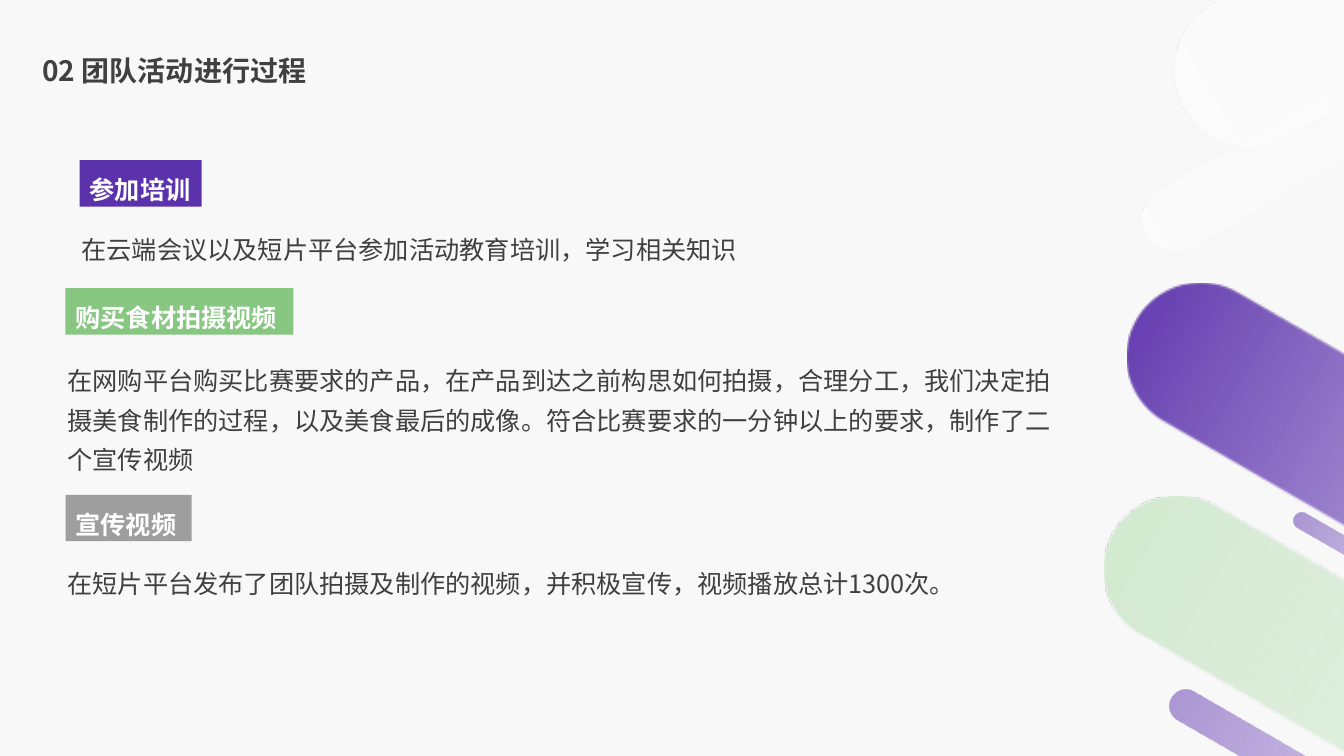
import pptx
import pptx.dml.color
import pptx.enum.shapes
import pptx.enum.text
import pptx.oxml
import pptx.oxml.ns
import pptx.util
from pptx.util import Inches

TEXT_FONT = "Noto Sans CJK SC"
TAG_FONT = "Quicksand"
INK = "404040"
WHITE = "FFFFFF"

# Gradient stops: position in %, colour, opacity in %
PURPLE_FADE = [(23, "5F34B2", 40), (85, WHITE, 50), (100, WHITE, 50)]
STRONG_PURPLE = [(0, "5B32AB", 100)] + PURPLE_FADE
SOFT_PURPLE = [(0, "5B32AB", 50)] + PURPLE_FADE
GREEN = [(0, "D0E9CE", 100), (22, "D0E9CE", 50), (85, WHITE, 50), (100, WHITE, 50)]
GLOW = [(0, WHITE, 50), (21, WHITE, 29), (85, WHITE, 0), (100, WHITE, 0)]

# Left, top, width, height, rotation, gradient
PILLS = [
    (9.9, 7.58, 20.55, 1.47, 30, STRONG_PURPLE),
    (10.96, -2.65, 11.87, 1.51, 330, GLOW),
    (11.02, 0.68, 5.27, 0.67, 330, GLOW),
    (9.68, 9.7, 20.55, 1.47, 30, GREEN),
    (12.68, 5.65, 2.44, 0.17, 30, SOFT_PURPLE),
    (11.31, 7.93, 4.69, 0.33, 30, SOFT_PURPLE),
]

# Tag left, tag top, tag width, tag colour, tag, details top, details height, details
STEPS = [
    (0.79, 1.59, 1.21, "5B32AB", "参加培训", 2.19, 0.46,
     "在云端会议以及短片平台参加活动教育培训，学习相关知识"),
    (0.65, 2.86, 2.26, "87C782", "购买食材拍摄视频", 3.49, 1.24,
     "在网购平台购买比赛要求的产品，在产品到达之前构思如何拍摄，合理分工，"
     "我们决定拍摄美食制作的过程，以及美食最后的成像。"
     "符合比赛要求的一分钟以上的要求，制作了二个宣传视频"),
    (0.65, 4.91, 1.25, "9E9E9E", "宣传视频", 5.5, 0.46,
     "在短片平台发布了团队拍摄及制作的视频，并积极宣传，视频播放总计1300次。"),
]


def rgb(code):
    return pptx.dml.color.RGBColor.from_string(code)


def write(frame, text, size, font_name, color, bold, line_spacing):
    """Fill a text frame with one left-aligned paragraph and return it."""
    frame.text = text
    paragraph = frame.paragraphs[0]
    paragraph.alignment = pptx.enum.text.PP_ALIGN.LEFT
    paragraph.line_spacing = line_spacing
    font = paragraph.font
    font.size = pptx.util.Pt(size)
    font.bold = bold
    font.name = font_name
    font.color.rgb = rgb(color)
    return paragraph


def fill_gradient(shape, stops):
    """Fill along the shape's length, with an opacity for each stop."""
    stop_xml = "".join(
        f'<a:gs pos="{position * 1000}"><a:srgbClr val="{color}">'
        f'<a:alpha val="{opacity * 1000}"/></a:srgbClr></a:gs>'
        for position, color, opacity in stops)
    gradient = pptx.oxml.parse_xml(
        f'<a:gradFill {pptx.oxml.ns.nsdecls("a")} rotWithShape="1">'
        f'<a:gsLst>{stop_xml}</a:gsLst><a:lin ang="0" scaled="0"/></a:gradFill>')
    shape.fill.solid()
    properties = shape._element.spPr
    properties.replace(properties.find(pptx.oxml.ns.qn("a:solidFill")), gradient)


def add_plain_shape(slide, kind, left, top, width, height):
    shape = slide.shapes.add_shape(
        kind, Inches(left), Inches(top), Inches(width), Inches(height))
    shape.shadow.inherit = False
    shape.line.fill.background()
    return shape


def add_pill(slide, left, top, width, height, rotation, stops):
    pill = add_plain_shape(
        slide, pptx.enum.shapes.MSO_SHAPE.ROUNDED_RECTANGLE, left, top, width, height)
    pill.adjustments[0] = 0.5
    pill.rotation = rotation
    fill_gradient(pill, stops)


def add_tag(slide, left, top, width, color, text):
    tag = add_plain_shape(
        slide, pptx.enum.shapes.MSO_SHAPE.RECTANGLE, left, top, width, 0.46)
    tag.fill.solid()
    tag.fill.fore_color.rgb = rgb(color)
    frame = tag.text_frame
    frame.word_wrap = False
    frame.vertical_anchor = pptx.enum.text.MSO_ANCHOR.TOP
    frame.auto_size = pptx.enum.text.MSO_AUTO_SIZE.SHAPE_TO_FIT_TEXT
    write(frame, text, 18, TAG_FONT, WHITE, True, 1.3)


def add_details(slide, left, top, height, text):
    details = slide.shapes.add_textbox(
        Inches(left), Inches(top), Inches(10.19), Inches(height))
    frame = details.text_frame
    frame.word_wrap = True
    frame.auto_size = pptx.enum.text.MSO_AUTO_SIZE.SHAPE_TO_FIT_TEXT
    write(frame, text, 18, TEXT_FONT, INK, False, 1.3)


def set_title(slide, text):
    title = slide.shapes.title
    title.left, title.top = Inches(0.32), Inches(0.43)
    title.width, title.height = Inches(4.99), Inches(0.58)
    frame = title.text_frame
    frame.vertical_anchor = pptx.enum.text.MSO_ANCHOR.MIDDLE
    frame.auto_size = pptx.enum.text.MSO_AUTO_SIZE.NONE
    heading = write(frame, text, 20, TEXT_FONT, INK, True, 0.9)
    heading.space_before = pptx.util.Pt(10)


def main():
    deck = pptx.Presentation()
    deck.slide_width, deck.slide_height = Inches(13.33), Inches(7.5)
    slide = deck.slides.add_slide(deck.slide_layouts[5])
    background = slide.background.fill
    background.solid()
    background.fore_color.rgb = rgb("F8F8F8")

    for pill in PILLS:
        add_pill(slide, *pill)
    set_title(slide, "02 团队活动进行过程")
    for left, top, width, color, tag, details_top, details_height, details in STEPS:
        add_details(slide, left - 0.08, details_top, details_height, details)
        add_tag(slide, left, top, width, color, tag)
    deck.save("out.pptx")


if __name__ == "__main__":
    main()
